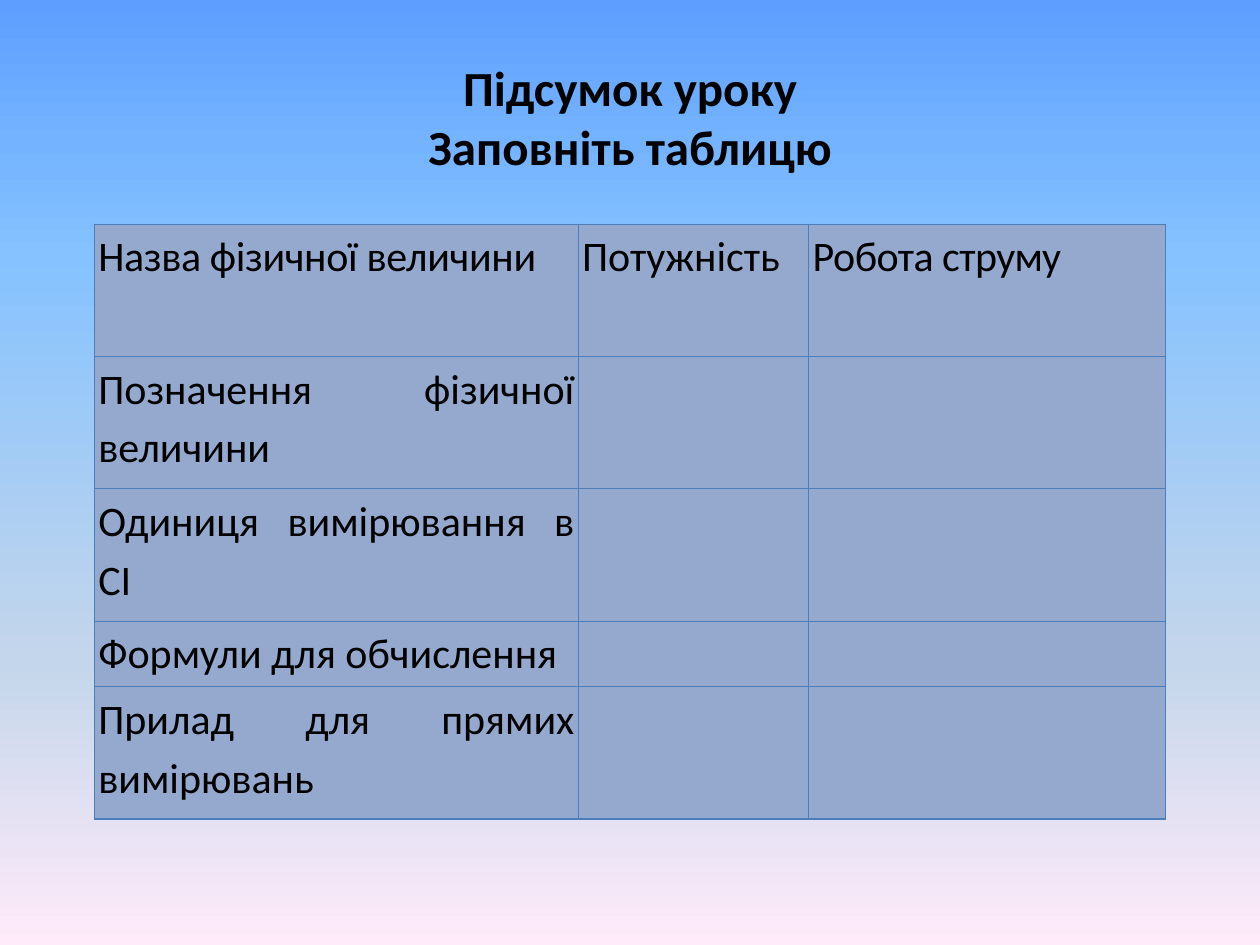
from dataclasses import dataclass

import pptx
import pptx.dml.color
import pptx.enum.text
import pptx.oxml.ns
import pptx.oxml.xmlchemy
import pptx.util
from lxml import etree
from pptx.util import Inches

RGB = pptx.dml.color.RGBColor.from_string
ALIGN = pptx.enum.text.PP_ALIGN
ANCHOR = pptx.enum.text.MSO_ANCHOR
qn = pptx.oxml.ns.qn


@dataclass(frozen=True)
class Theme:
    font: str = "Calibri"
    title_size: int = 28
    cell_size: int = 24
    text: str = "000000"
    cell_fill: str = "95A9CF"
    border: str = "4B7EBC"
    border_width: float = 0.75
    sky: tuple = ((0, "5E9EFF"), (15, "74B3FF"), (27, "85C2FF"),
                  (70, "C4D6EB"), (100, "FFEBFA"))


THEME = Theme()
TITLE_LINES = ("Підсумок уроку", "Заповніть таблицю")
QUANTITIES = ("Назва фізичної величини", "Потужність", "Робота струму")
PROPERTIES = ("Позначення фізичної величини", "Одиниця вимірювання в СІ",
              "Формули для обчислення", "Прилад для прямих вимірювань")
LETTER_SPACING = {QUANTITIES[0]: -0.2, QUANTITIES[2]: -0.3}
COLUMN_WIDTHS = (3.84, 1.83, 2.83)
ROW_HEIGHTS = (1.05, 1.05, 1.05, 0.52, 1.05)


def add_color(parent, color):
    etree.SubElement(parent, qn("a:srgbClr"), val=color)


def paint_background(slide):
    fill = slide.background.fill
    fill.gradient()
    fill.gradient_angle = 270
    stops = slide.element.find(".//" + qn("a:gsLst"))
    for stop in list(stops):
        stops.remove(stop)
    for percent, color in THEME.sky:
        add_color(etree.SubElement(stops, qn("a:gs"), pos=str(percent * 1000)), color)


def add_text(paragraph, text, size, bold=False):
    run = paragraph.add_run()
    run.text = text
    run.font.name = THEME.font
    run.font.size = pptx.util.Pt(size)
    run.font.bold = bold
    run.font.color.rgb = RGB(THEME.text)
    return run


def fill_title(title):
    title.left, title.top = Inches(0.5), Inches(0.3)
    title.width, title.height = Inches(9), Inches(1.25)
    title.text_frame.vertical_anchor = ANCHOR.MIDDLE
    heading = title.text_frame.paragraphs[0]
    heading.alignment = ALIGN.CENTER
    for index, line in enumerate(TITLE_LINES):
        if index:
            heading.add_line_break()
        add_text(heading, line, THEME.title_size, bold=True)


def style_cell(cell):
    cell.margin_left = cell.margin_right = Inches(0.03)
    cell.margin_top = cell.margin_bottom = 0
    properties = cell._tc.get_or_add_tcPr()
    width = str(pptx.util.Pt(THEME.border_width))
    for side in ("a:lnL", "a:lnR", "a:lnT", "a:lnB"):
        border = etree.SubElement(properties, qn(side), w=width)
        add_color(etree.SubElement(border, qn("a:solidFill")), THEME.border)
    cell.fill.solid()
    cell.fill.fore_color.rgb = RGB(THEME.cell_fill)


def write_cell(cell, text):
    paragraph = cell.text_frame.paragraphs[0]
    paragraph.alignment = ALIGN.JUSTIFY
    paragraph.line_spacing = 1.15
    run = add_text(paragraph, text, THEME.cell_size)
    if text in LETTER_SPACING:
        run.font._element.set("spc", str(round(LETTER_SPACING[text] * 100)))


def add_summary_table(slide):
    rows = [QUANTITIES] + [(name, "", "") for name in PROPERTIES]
    table = slide.shapes.add_table(
        len(rows), len(COLUMN_WIDTHS), Inches(0.75), Inches(1.78),
        Inches(sum(COLUMN_WIDTHS)), Inches(sum(ROW_HEIGHTS))).table
    table.horz_banding = False
    table.first_row = False
    for column, width in zip(table.columns, COLUMN_WIDTHS):
        column.width = Inches(width)
    for row, height, texts in zip(table.rows, ROW_HEIGHTS, rows):
        row.height = Inches(height)
        for cell, text in zip(row.cells, texts):
            style_cell(cell)
            if text:
                write_cell(cell, text)


def main():
    deck = pptx.Presentation()
    deck.slide_width, deck.slide_height = Inches(10), Inches(7.5)
    slide = deck.slides.add_slide(deck.slide_layouts.get_by_name("Title Only"))
    paint_background(slide)
    fill_title(slide.shapes.title)
    add_summary_table(slide)
    deck.save("out.pptx")


if __name__ == "__main__":
    main()
